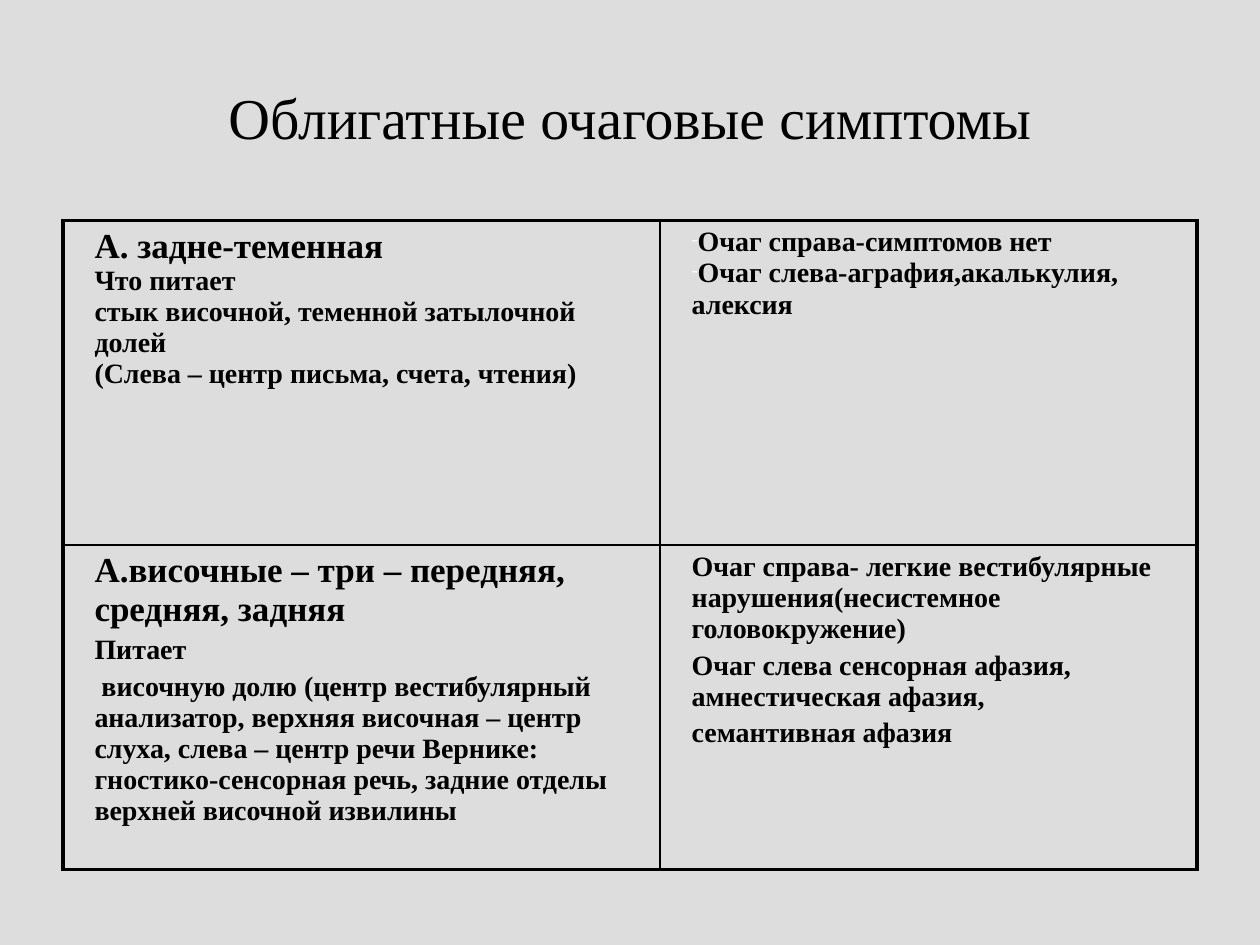
from dataclasses import dataclass

from lxml.etree import SubElement
from pptx import Presentation
from pptx.dml.color import RGBColor
from pptx.enum.text import MSO_ANCHOR, PP_ALIGN
from pptx.oxml.ns import qn
from pptx.util import Inches, Pt


@dataclass(frozen=True)
class Theme:
    font: str = "Times New Roman"
    background: str = "DDDDDD"
    ink: str = "000000"
    bullet: str = "F9F9F9"
    title_size: int = 33
    heading_size: int = 20
    body_size: int = 16
    outer_line: float = 2.25
    inner_line: float = 1
    indent: float = 0.15


@dataclass(frozen=True)
class CellText:
    lines: tuple
    heading: str = ""
    bulleted: bool = False
    spaced: bool = False


class SlideBuilder:
    def __init__(self, presentation, theme):
        self.theme = theme
        self.width = presentation.slide_width
        self.height = presentation.slide_height
        self.slide = presentation.slides.add_slide(presentation.slide_layouts[6])
        fill = self.slide.background.fill
        fill.solid()
        fill.fore_color.rgb = RGBColor.from_string(theme.background)

    def place(self, left, top, width, height):
        return (round(left * self.width), round(top * self.height),
                round(width * self.width), round(height * self.height))

    def add_run(self, paragraph, text, size, bold=False):
        run = paragraph.add_run()
        run.text = text
        run.font.name = self.theme.font
        run.font.size = Pt(size)
        run.font.bold = bold
        run.font.color.rgb = RGBColor.from_string(self.theme.ink)

    def add_title(self, text, area):
        frame = self.slide.shapes.add_textbox(*self.place(*area)).text_frame
        frame.word_wrap = True
        frame.vertical_anchor = MSO_ANCHOR.MIDDLE
        paragraph = frame.paragraphs[0]
        paragraph.alignment = PP_ALIGN.CENTER
        self.add_run(paragraph, text, self.theme.title_size)

    def format_paragraph(self, paragraph, content):
        properties = paragraph._p.get_or_add_pPr()
        properties.set("marL", str(Inches(self.theme.indent)))
        properties.set("indent", "0")
        if content.spaced:
            spacing = SubElement(properties, qn("a:spcBef"))
            SubElement(spacing, qn("a:spcPct"), val="20000")
        if content.bulleted:
            color = SubElement(properties, qn("a:buClr"))
            SubElement(color, qn("a:srgbClr"), val=self.theme.bullet)
            SubElement(properties, qn("a:buSzPct"), val="65000")
            SubElement(properties, qn("a:buChar"), char="-")
        else:
            SubElement(properties, qn("a:buNone"))

    def fill_cell(self, cell, content):
        cell.fill.background()
        lines = [(line, self.theme.body_size) for line in content.lines]
        if content.heading:
            lines.insert(0, (content.heading, self.theme.heading_size))
        frame = cell.text_frame
        for index, (text, size) in enumerate(lines):
            paragraph = frame.add_paragraph() if index else frame.paragraphs[0]
            self.format_paragraph(paragraph, content)
            self.add_run(paragraph, text, size, bold=True)

    def draw_borders(self, cell, outer_sides):
        properties = cell._tc.get_or_add_tcPr()
        for index, (side, outer) in enumerate(outer_sides.items()):
            weight = self.theme.outer_line if outer else self.theme.inner_line
            line = properties.makeelement(qn(f"a:{side}"), {"w": str(Pt(weight))})
            color = SubElement(line, qn("a:solidFill"))
            SubElement(color, qn("a:srgbClr"), val=self.theme.ink)
            properties.insert(index, line)

    def add_table(self, rows, area, column_shares):
        row_count, column_count = len(rows), len(column_shares)
        position = self.place(*area)
        table = self.slide.shapes.add_table(row_count, column_count, *position).table
        table.first_row = False
        table.horz_banding = False
        for column, share in zip(table.columns, column_shares):
            column.width = round(share * position[2])
        for row_index, row in enumerate(rows):
            for column_index, content in enumerate(row):
                cell = table.cell(row_index, column_index)
                self.fill_cell(cell, content)
                self.draw_borders(cell, {
                    "lnL": column_index == 0,
                    "lnR": column_index == column_count - 1,
                    "lnT": row_index == 0,
                    "lnB": row_index == row_count - 1,
                })


ARTERIES = (
    (
        CellText(
            heading="А. задне-теменная",
            lines=("Что питает",
                   "стык височной, теменной затылочной долей",
                   "(Слева – центр письма, счета, чтения)"),
        ),
        CellText(
            lines=("Очаг справа-симптомов нет",
                   "Очаг слева-аграфия,акалькулия, алексия"),
            bulleted=True,
        ),
    ),
    (
        CellText(
            heading="А.височные – три – передняя, средняя, задняя",
            lines=("Питает",
                   " височную долю (центр вестибулярный анализатор, "
                   "верхняя височная – центр слуха, слева – центр речи Вернике: "
                   "гностико-сенсорная речь, задние отделы верхней височной извилины"),
            spaced=True,
        ),
        CellText(
            lines=("Очаг справа- легкие вестибулярные "
                   "нарушения(несистемное головокружение)",
                   "Очаг слева сенсорная афазия, амнестическая афазия,",
                   "семантивная афазия"),
            spaced=True,
        ),
    ),
)


def main():
    presentation = Presentation()
    presentation.slide_width = Inches(10)
    presentation.slide_height = Inches(7.5)
    builder = SlideBuilder(presentation, Theme())
    builder.add_title("Облигатные очаговые симптомы", (0.05, 0.04, 0.9, 1 / 6))
    builder.add_table(ARTERIES, (0.05, 0.7 / 3, 0.9, 5.15 / 7.5), (4.74 / 9, 4.26 / 9))
    presentation.save("out.pptx")


if __name__ == "__main__":
    main()
